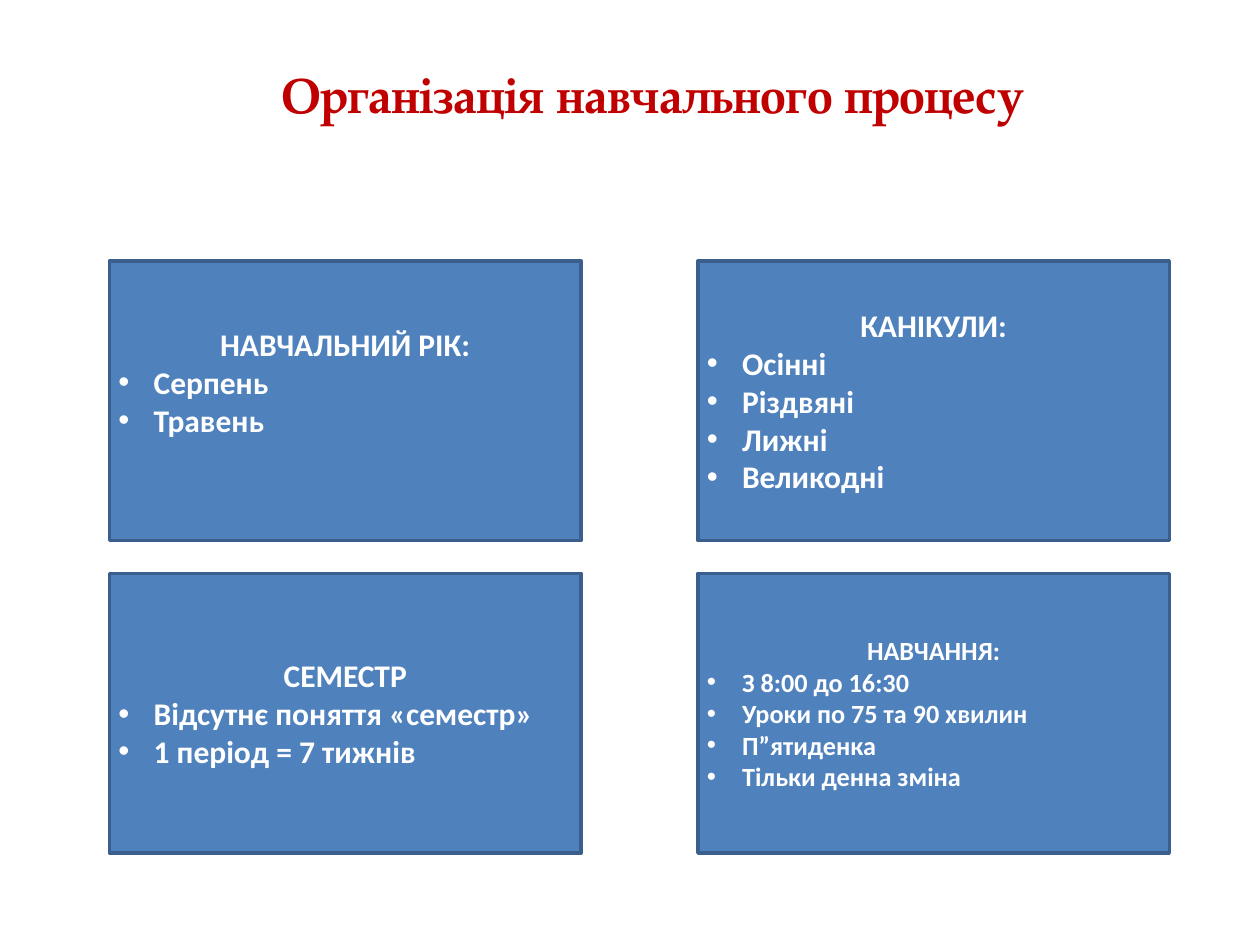
from lxml.etree import SubElement
from pptx import Presentation
from pptx.dml.color import RGBColor
from pptx.enum.shapes import MSO_SHAPE as Shape
from pptx.enum.text import MSO_ANCHOR as Anchor, PP_ALIGN as Align
from pptx.oxml.ns import qn
from pptx.util import Inches, Pt

LEFT, TOP = 0.87, 2.07
WIDE, HIGH = 3.74, 2.22
COL, ROW = 4.67, 2.48
LINE = 0.3
INSET = {"margin_left": 0.07, "margin_right": 0.07,
         "margin_top": 0.04, "margin_bottom": 0.04}

CARDS = [
    (0, 0, 18, 1, "НАВЧАЛЬНИЙ РІК:", ["Серпень", "Травень"]),
    (1, 0, 18, 0, "КАНІКУЛИ:", ["Осінні", "Різдвяні", "Лижні", "Великодні"]),
    (1, 1, 15, 0, "НАВЧАННЯ:", ["З 8:00 до 16:30", "Уроки по 75 та 90 хвилин",
                                "П”ятиденка", "Тільки денна зміна"]),
    (0, 1, 18, 0, "СЕМЕСТР", ["Відсутнє поняття «семестр»",
                              "1 період = 7 тижнів"]),
]


def paint(code):
    return RGBColor.from_string(code)


def style(para, name, size, code):
    look = {"name": name, "size": Pt(size), "bold": True}
    for key, value in look.items():
        setattr(para.font, key, value)
    para.font.color.rgb = paint(code)


def place(shape, box):
    for key, value in zip(("left", "top", "width", "height"), box):
        setattr(shape, key, Inches(value))


def bullet(para):
    props = para._p.get_or_add_pPr()
    props.set("marL", str(Inches(0.28)))
    props.set("indent", str(-Inches(0.28)))
    SubElement(props, qn("a:buFont")).set("typeface", "Arial")
    SubElement(props, qn("a:buChar")).set("char", "•")


def add_title(slide, box):
    title = slide.shapes.title
    place(title, box)
    frame = title.text_frame
    frame.text = "Організація навчального процесу"
    frame.vertical_anchor = Anchor.MIDDLE
    para = frame.paragraphs[0]
    para.alignment = Align.CENTER
    style(para, "TeX Gyre Pagella", 28, "C00000")


def add_card(slide, box, size, spare, head, items):
    card = slide.shapes.add_shape(Shape.FLOWCHART_PROCESS, *map(Inches, box))
    card.shadow.inherit = False
    card.fill.solid()
    card.fill.fore_color.rgb = paint("4F81BD")
    card.line.color.rgb = paint("3A5F8C")
    card.line.width = Pt(2)
    frame = card.text_frame
    frame.word_wrap = True
    frame.vertical_anchor = Anchor.MIDDLE
    for key, value in INSET.items():
        setattr(frame, key, Inches(value))
    frame.margin_bottom += Inches(spare * LINE)
    frame.text = "\n".join([head, *items])
    for spot, para in enumerate(frame.paragraphs):
        para.alignment = Align.LEFT if spot else Align.CENTER
        if spot:
            bullet(para)
        style(para, "Calibri", size, "FFFFFF")


def main():
    deck = Presentation()
    deck.slide_width, deck.slide_height = Inches(10), Inches(7.5)
    slide = deck.slides.add_slide(deck.slide_layouts[5])
    add_title(slide, (1.68, 0.31, 6.99, 0.87))
    for col, row, *rest in CARDS:
        box = (LEFT + col * COL, TOP + row * ROW, WIDE, HIGH)
        add_card(slide, box, *rest)
    deck.save("out.pptx")


if __name__ == "__main__":
    main()
